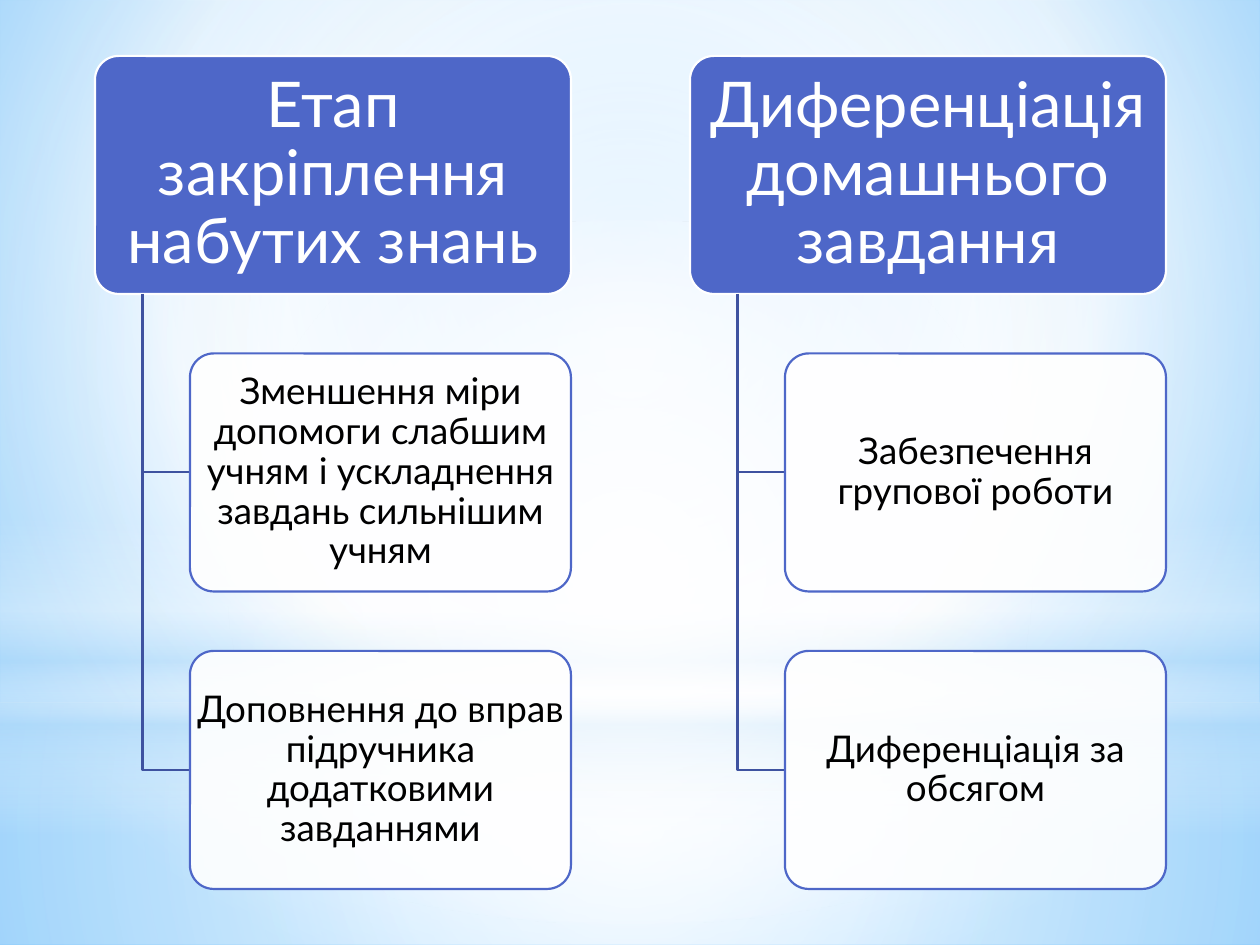
from lxml import etree
from pptx import Presentation
from pptx import util as u
from pptx.dml.color import RGBColor
from pptx.enum import shapes, text
from pptx.oxml import ns

PX = u.Inches(1) / 126

THEME = {
    "font": "Lato",
    "blue": "4E67C8", "rail": "3E52A0", "white": "FFFFFF", "black": "000000",
    "sky": "B4DCFA", "pale": "9ED5FF", "deep": "5BB9FF",
    "line": 1.25, "round": 0.1, "lead": 0.9,
}
HEAD = {"fill": "blue", "alpha": 100, "line": "white", "ink": "white",
        "size": 36, "pad": (9, 6)}
ITEM = {"fill": "white", "alpha": 90, "line": "blue", "ink": "black",
        "size": 21, "pad": (5, 4)}

GROUPS = [
    ("Етап закріплення набутих знань", [
        "Зменшення міри допомоги слабшим учням і ускладнення завдань сильнішим учням",
        "Доповнення до вправ підручника додатковими завданнями"]),
    ("Диференціація домашнього завдання", [
        "Забезпечення групової роботи",
        "Диференціація за обсягом"]),
]

# Gradient stops: position %, colour, opacity %
CENTRE = (50, 50, 50, 50)
BACK = [(0, "pale", 100), (60, "white", 100), (100, "deep", 100)]
RECT, OVAL = shapes.MSO_SHAPE.RECTANGLE, shapes.MSO_SHAPE.OVAL
GLOWS = [
    (RECT, (0, 703, 1260, 242), CENTRE,
     [(0, "white", 91), (37, "white", 76), (100, "sky", 79)]),
    (RECT, (0, 0, 1260, 703), CENTRE,
     [(0, "white", 89), (48, "white", 62), (100, "sky", 79)]),
    (RECT, (0, 519, 1260, 315), None,
     [(0, "white", 0), (29, "white", 30), (45, "sky", 40),
      (55, "white", 26), (65, "sky", 60), (100, "white", 0)]),
    (OVAL, (0, 221, 1260, 703), CENTRE,
     [(0, "white", 100), (56, "white", 0)]),
]

LEFT, TOP, WIDE, HIGH = 95, 56, 476, 238
INDENT = WIDE // 5
STEP_X, STEP_Y = WIDE * 5 / 4, HIGH * 5 / 4


def emu(*px):
    return [round(v * PX) for v in px]


def tone(name):
    return RGBColor.from_string(THEME[name])


def sub(node, tag, **attrs):
    kid = etree.SubElement(node, ns.qn("a:" + tag))
    for key, val in attrs.items():
        kid.set(key, str(val))
    return kid


def blend(fill, node, stops, focus):
    """Give node a radial gradient around focus, or a vertical one without it."""
    fill.background()
    old = next(node.iter(ns.qn("a:noFill")))
    grad = etree.Element(ns.qn("a:gradFill"), rotWithShape="1")
    row = sub(grad, "gsLst")
    for pos, name, alpha in stops:
        stop = sub(row, "gs", pos=pos * 1000)
        hue = sub(stop, "srgbClr", val=THEME[name])
        if alpha < 100:
            sub(hue, "alpha", val=alpha * 1000)
    if focus:
        ring = sub(grad, "path", path="circle")
        sub(ring, "fillToRect", **{k: v * 1000 for k, v in zip("ltrb", focus)})
    else:
        sub(grad, "lin", ang=90 * 60000, scaled=0)
    old.getparent().replace(old, grad)


def stroke(shape, name):
    shape.line.color.rgb = tone(name)
    shape.line.width = u.Pt(THEME["line"])
    shape.shadow.inherit = False


def card(slide, words, box, look):
    shape = slide.shapes.add_shape(shapes.MSO_SHAPE.ROUNDED_RECTANGLE, *emu(*box))
    shape.adjustments[0] = THEME["round"]
    shape.fill.solid()
    shape.fill.fore_color.rgb = tone(look["fill"])
    if look["alpha"] < 100:
        hue = next(shape._element.spPr.iter(ns.qn("a:srgbClr")))
        sub(hue, "alpha", val=look["alpha"] * 1000)
    stroke(shape, look["line"])

    # A separate box keeps the full width, free of the rounded corners' inset
    frame = slide.shapes.add_textbox(*emu(*box)).text_frame
    side, edge = emu(*look["pad"])
    form = {"word_wrap": True, "vertical_anchor": text.MSO_ANCHOR.MIDDLE,
            "margin_left": side, "margin_right": side,
            "margin_top": edge, "margin_bottom": edge}
    for key, val in form.items():
        setattr(frame, key, val)
    para = frame.paragraphs[0]
    para.alignment = text.PP_ALIGN.CENTER
    para.line_spacing = THEME["lead"]
    run = para.add_run()
    run.text = words
    run.font.name = THEME["font"]
    run.font.size = u.Pt(look["size"])
    run.font.color.rgb = tone(look["ink"])


def elbow(slide, x, top, end, y):
    pen = slide.shapes.build_freeform(*emu(x, top))
    pen.add_line_segments([emu(x, y), emu(end, y)], close=False)
    shape = pen.convert_to_shape()
    shape.fill.background()
    stroke(shape, "rail")


def main():
    deck = Presentation()
    deck.slide_width, deck.slide_height = emu(1260, 945)
    slide = deck.slides.add_slide(deck.slide_layouts[6])
    blend(slide.background.fill, slide._element, BACK, (20, 10, 20, 60))

    for kind, box, focus, stops in GLOWS:
        glow = slide.shapes.add_shape(kind, *emu(*box))
        blend(glow.fill, glow._element.spPr, stops, focus)
        glow.line.fill.background()
        glow.shadow.inherit = False

    for col, (head, items) in enumerate(GROUPS):
        x = LEFT + col * STEP_X
        card(slide, head, (x, TOP, WIDE, HIGH), HEAD)
        for row, item in enumerate(items, 1):
            y = TOP + row * STEP_Y
            elbow(slide, x + INDENT / 2, TOP + HIGH, x + INDENT, y + HIGH / 2)
            card(slide, item, (x + INDENT, y, WIDE - INDENT, HIGH), ITEM)

    deck.save("out.pptx")


if __name__ == "__main__":
    main()
